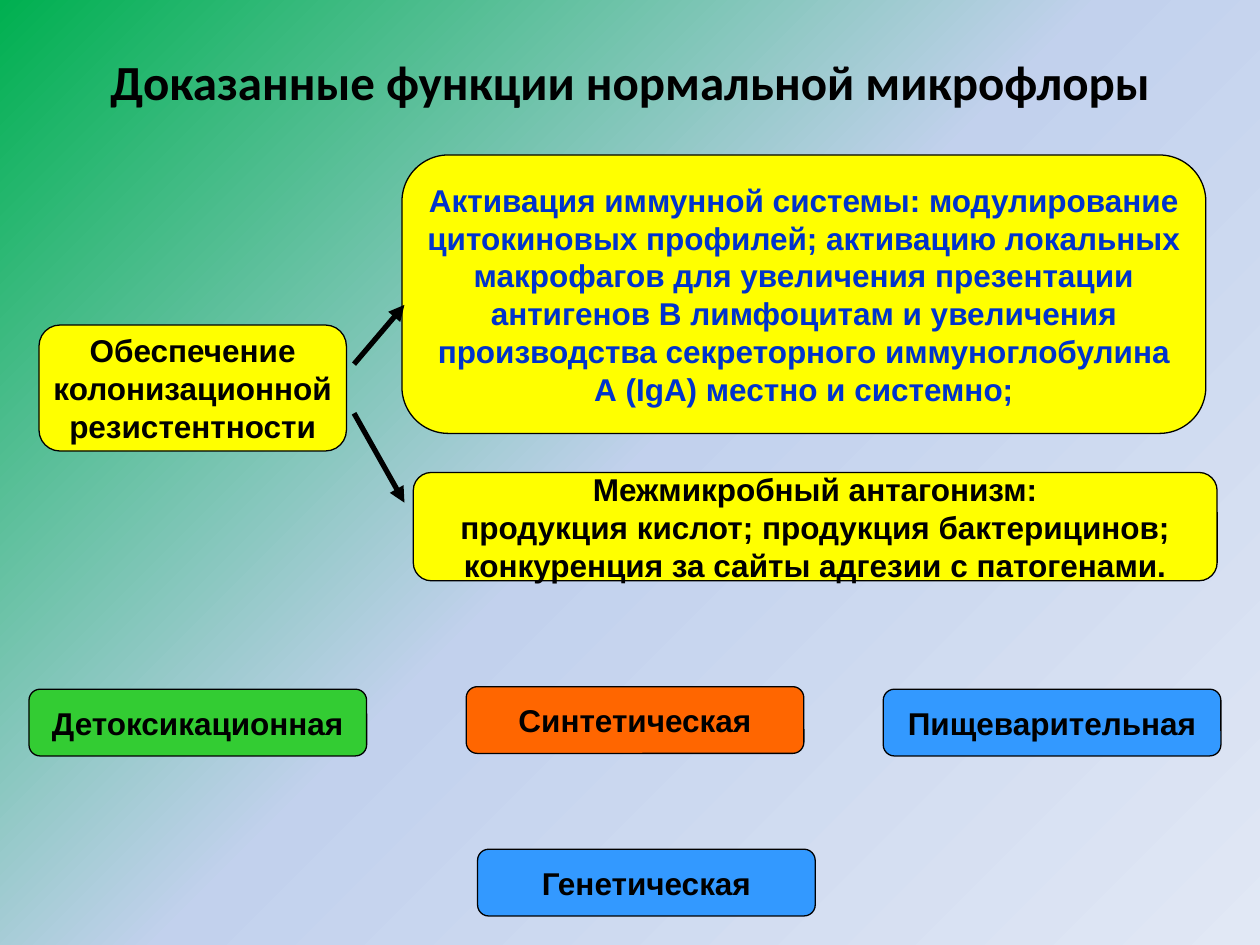
from copy import deepcopy
from lxml import etree
from pptx import Presentation
from pptx import util as u
from pptx.dml import color
from pptx.enum import shapes, text
from pptx.oxml import ns

hues = {
    "black": "000000", "yellow": "FFFF00", "navy": "0033CC",
    "green": "33CC33", "orange": "FF6600", "blue": "3399FF",
    "start": "00B050", "middle": "C2D1ED", "end": "E1E8F5",
}


def tint(name):
    return color.RGBColor.from_string(hues[name])


def write(shape, lines, size, face, hue, wrap):
    frame = shape.text_frame
    frame.word_wrap = wrap
    frame.vertical_anchor = text.MSO_ANCHOR.MIDDLE
    form = {"size": u.Pt(size), "name": face, "bold": True}
    for num, line in enumerate(lines):
        para = frame.paragraphs[0] if num == 0 else frame.add_paragraph()
        para.alignment = text.PP_ALIGN.CENTER
        run = para.add_run()
        run.text = line
        for key, value in form.items():
            setattr(run.font, key, value)
        run.font.color.rgb = tint(hue)


deck = Presentation()
deck.slide_width = u.Inches(10)
deck.slide_height = u.Inches(7.5)
slide = deck.slides.add_slide(deck.slide_layouts[6])

fill = slide.background.fill
fill.gradient()
fill.gradient_angle = 315
first = fill.gradient_stops[0]._gs
first.addnext(deepcopy(first))
for stop, name, place in zip(fill.gradient_stops, ("start", "middle", "end"), (0, 0.5, 1)):
    stop.color.rgb = tint(name)
    stop.position = place

title = slide.shapes.add_textbox(u.Inches(0.5), u.Inches(0.3), u.Inches(9), u.Inches(0.69))
write(title, ["Доказанные функции нормальной микрофлоры"], 28, "Calibri", "black", True)

wide, low = 2.68, 0.53
boxes = [
    (0.23, 5.47, wide, low, "green", "black", ["Детоксикационная"]),
    (3.19, 1.23, 6.38, 2.21, "yellow", "navy", [
        "Активация иммунной системы: модулирование",
        "цитокиновых профилей; активацию локальных",
        "макрофагов для увеличения презентации",
        "антигенов B лимфоцитам и увеличения",
        "производства секреторного иммуноглобулина",
        "А (IgA) местно и системно;",
    ]),
    (3.28, 3.75, 6.38, 0.86, "yellow", "black", [
        "Межмикробный антагонизм:",
        "продукция кислот; продукция бактерицинов;",
        "конкуренция за сайты адгезии с патогенами.",
    ]),
    (0.31, 2.58, 2.44, 1, "yellow", "black", [
        "Обеспечение", "колонизационной", "резистентности",
    ]),
    (3.7, 5.45, wide, low, "orange", "black", ["Синтетическая"]),
    (7.01, 5.47, wide, low, "blue", "black", ["Пищеварительная"]),
    (3.79, 6.74, wide, low, "blue", "black", ["Генетическая"]),
]
for left, top, width, height, back, ink, lines in boxes:
    box = slide.shapes.add_shape(
        shapes.MSO_SHAPE.ROUNDED_RECTANGLE,
        u.Inches(left), u.Inches(top), u.Inches(width), u.Inches(height))
    box.shadow.inherit = False
    box.fill.solid()
    box.fill.fore_color.rgb = tint(back)
    box.line.color.rgb = tint("black")
    box.line.width = u.Pt(0.75)
    write(box, lines, 18, "Arial", ink, False)

for start, end in ((2.89, 2.42), (3.28, 3.99)):
    arrow = slide.shapes.add_connector(
        shapes.MSO_CONNECTOR.STRAIGHT,
        u.Inches(2.81), u.Inches(start), u.Inches(3.21), u.Inches(end))
    arrow.line.color.rgb = tint("black")
    arrow.line.width = u.Pt(3)
    stroke = arrow.line._get_or_add_ln()
    etree.SubElement(stroke, ns.qn("a:tailEnd"), type="triangle")
    etree.SubElement(arrow._element.spPr, ns.qn("a:effectLst"))

deck.save("out.pptx")
